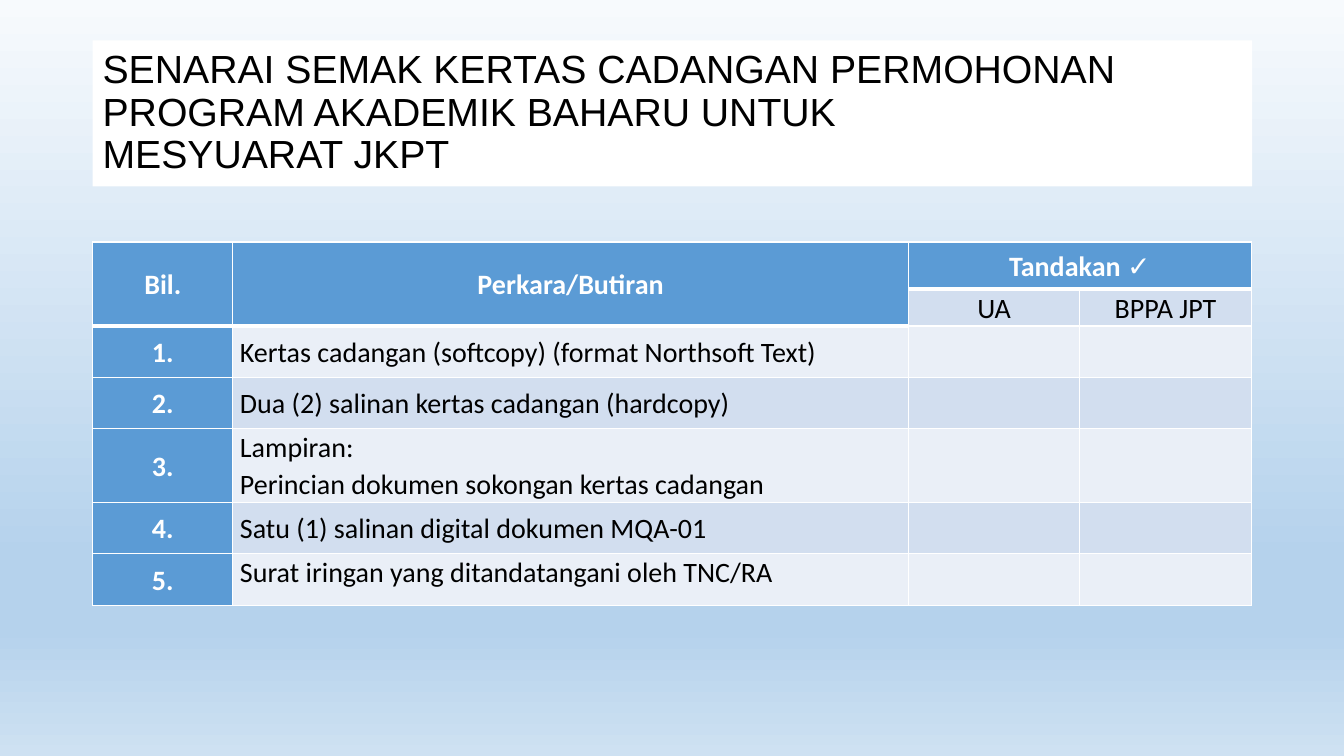
"""Build the checklist slide for new academic programme proposals."""
from lxml import etree
from pptx import Presentation
from pptx import util as u
from pptx.dml.color import RGBColor
from pptx.enum import shapes, text
from pptx.oxml.ns import qn

TITLE = ["SENARAI SEMAK KERTAS CADANGAN PERMOHONAN PROGRAM AKADEMIK BAHARU UNTUK",
         "MESYUARAT JKPT"]
HEADERS = [["Bil.", "Perkara/Butiran", "Tandakan ✓", ""], ["", "", "UA", "BPPA JPT"]]
ITEMS = [
    ["Kertas cadangan (softcopy) (format Northsoft Text)"],
    ["Dua (2) salinan kertas cadangan (hardcopy)"],
    ["Lampiran:", "Perincian dokumen sokongan kertas cadangan"],
    ["Satu (1) salinan digital dokumen MQA-01"],
    ["Surat iringan yang ditandatangani oleh TNC/RA"],
]
BACKGROUND = [(0, "F7FAFD"), (74, "B5D2EC"), (83, "B5D2EC"), (100, "CEE1F2")]
BLUE, PALE, PALEST, WHITE, BLACK = "5B9BD5", "D2DEEF", "EAEFF7", "FFFFFF", "000000"
COLUMNS = [1.39, 6.7, 1.7, 1.7]
ROWS = [0.47, 0.36, 0.51, 0.51, 0.73, 0.51, 0.51]
MERGES = [((0, 0), (1, 0)), ((0, 1), (1, 1)), ((0, 2), (0, 3))]
THICK_BELOW = {(0, 0), (0, 1), (1, 0), (1, 1), (0, 2), (0, 3)}
LEFT, WIDTH = 0.92, 11.5


def paint(fill, color):
    fill.solid()
    fill.fore_color.rgb = RGBColor.from_string(color)


def write(frame, lines, font, size, color, align, spacing, bold=False):
    for index, line in enumerate(lines):
        para = frame.add_paragraph() if index else frame.paragraphs[0]
        para.alignment, para.line_spacing = align, spacing
        span = para.add_run()
        span.text = line
        span.font.name, span.font.size, span.font.bold = font, u.Pt(size), bold
        paint(span.font.fill, color)


def paint_background(page):
    fill = page.background.fill
    fill.gradient()
    fill.gradient_angle = 270
    stops = page.element.find(".//" + qn("a:gsLst"))
    for stop in list(stops):
        stops.remove(stop)
    for percent, color in BACKGROUND:
        stop = etree.SubElement(stops, qn("a:gs"), pos=str(percent * 1000))
        etree.SubElement(stop, qn("a:srgbClr"), val=color)


def add_borders(cell, row, column):
    widths = {"L": 1, "R": 1,
              "T": 3 if (row - 1, column) in THICK_BELOW else 1,
              "B": 3 if (row, column) in THICK_BELOW else 1}
    properties = cell._tc.get_or_add_tcPr()
    for index, (side, width) in enumerate(widths.items()):
        line = etree.Element(qn("a:ln" + side), w=str(u.Pt(width)))
        solid = etree.SubElement(line, qn("a:solidFill"))
        etree.SubElement(solid, qn("a:srgbClr"), val=WHITE)
        properties.insert(index, line)


def add_title(page):
    box = page.shapes.add_shape(shapes.MSO_SHAPE.RECTANGLE, u.Inches(LEFT), u.Inches(0.4),
                                u.Inches(WIDTH), u.Inches(1.45))
    box.shadow.inherit = False
    paint(box.fill, WHITE)
    box.line.fill.background()
    box.text_frame.word_wrap = True
    box.text_frame.vertical_anchor = text.MSO_ANCHOR.MIDDLE
    write(box.text_frame, TITLE, "Arial", 28, BLACK, text.PP_ALIGN.LEFT, 0.9)


def add_checklist(page):
    content = [[[label] if label else [] for label in labels] for labels in HEADERS]
    content += [[[f"{number}."], lines, [], []] for number, lines in enumerate(ITEMS, 1)]
    table = page.shapes.add_table(len(ROWS), len(COLUMNS), u.Inches(LEFT), u.Inches(2.4),
                                  u.Inches(WIDTH), u.Inches(sum(ROWS))).table
    for column, width in zip(table.columns, COLUMNS):
        column.width = u.Inches(width)
    for row, height in zip(table.rows, ROWS):
        row.height = u.Inches(height)
    for first, last in MERGES:
        table.cell(*first).merge(table.cell(*last))
    for row, cells in enumerate(content):
        for column, lines in enumerate(cells):
            cell = table.cell(row, column)
            heading = row == 0 or column == 0 or (row, column) == (1, 1)
            paint(cell.fill, BLUE if heading else PALE if row % 2 else PALEST)
            add_borders(cell, row, column)
            cell.margin_left = cell.margin_right = u.Inches(0.07)
            cell.margin_top = cell.margin_bottom = 0
            last_item = row == len(ROWS) - 1 and column == 1
            cell.vertical_anchor = text.MSO_ANCHOR.TOP if last_item else text.MSO_ANCHOR.MIDDLE
            item = row >= len(HEADERS) and column == 1
            align = text.PP_ALIGN.LEFT if item else text.PP_ALIGN.CENTER
            write(cell.text_frame, lines, "Calibri", 20, WHITE if heading else BLACK,
                  align, 1.07, heading)


def main():
    deck = Presentation()
    deck.slide_width, deck.slide_height = u.Inches(13.33), u.Inches(7.5)
    page = deck.slides.add_slide(deck.slide_layouts[6])
    paint_background(page)
    add_title(page)
    add_checklist(page)
    deck.save("out.pptx")


if __name__ == "__main__":
    main()
